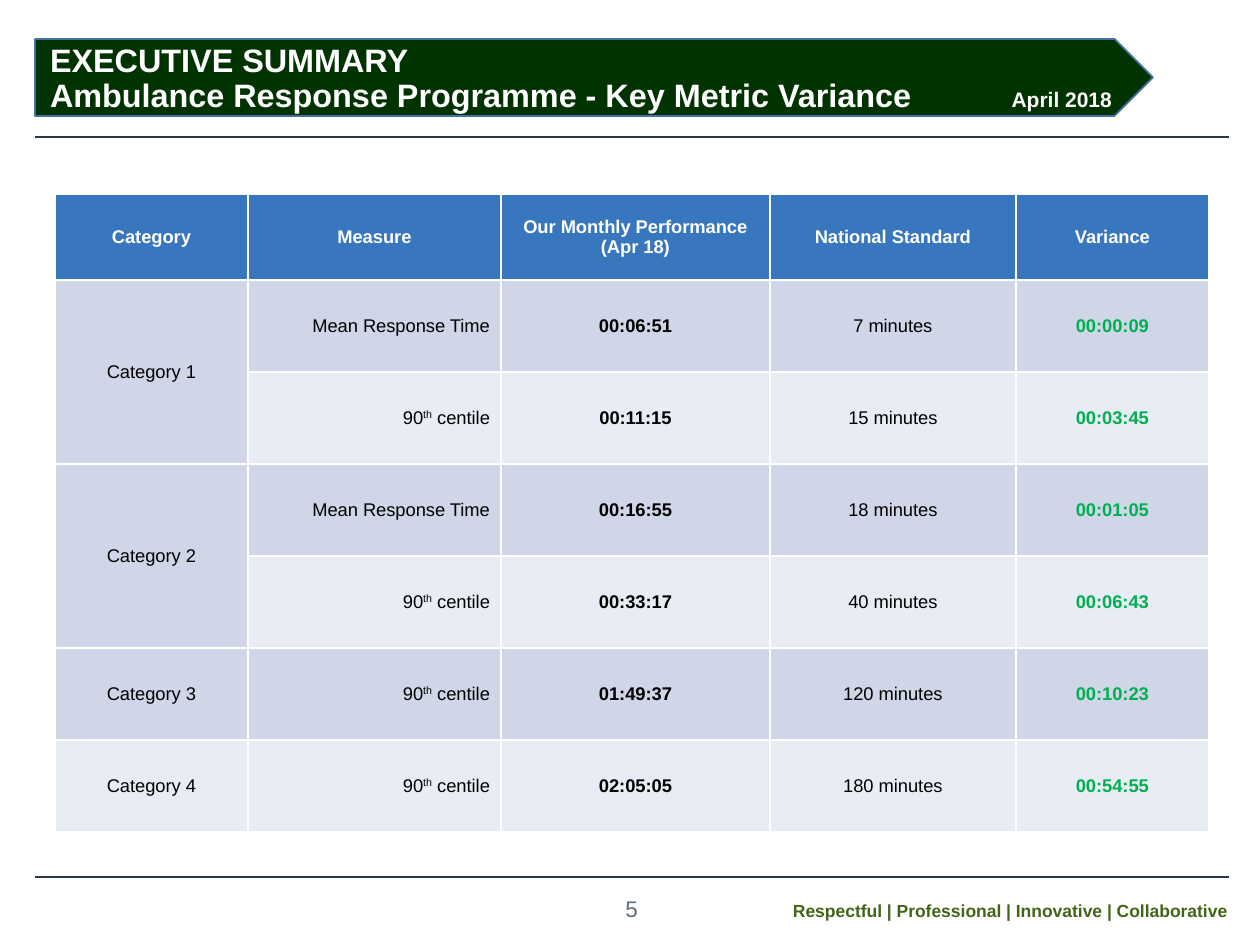
from lxml.etree import SubElement
from pptx import Presentation
from pptx.dml.color import RGBColor
from pptx.enum.shapes import MSO_CONNECTOR, MSO_SHAPE
from pptx.enum.text import MSO_ANCHOR, MSO_AUTO_SIZE, PP_ALIGN
from pptx.oxml.ns import qn
from pptx.util import Pt

EMU_PER_PX = 914400 / 126
HEADERS = ["Category", "Measure", "Our Monthly Performance\n(Apr 18)", "National Standard", "Variance"]
MEAN, CENTILE = "Mean Response Time", "90^th^ centile"
METRICS = [
    ("Category 1", MEAN, "00:06:51", "7 minutes", "00:00:09"),
    ("", CENTILE, "00:11:15", "15 minutes", "00:03:45"),
    ("Category 2", MEAN, "00:16:55", "18 minutes", "00:01:05"),
    ("", CENTILE, "00:33:17", "40 minutes", "00:06:43"),
    ("Category 3", CENTILE, "01:49:37", "120 minutes", "00:10:23"),
    ("Category 4", CENTILE, "02:05:05", "180 minutes", "00:54:55"),
]
COLUMN_WIDTHS = [193, 253, 269, 246, 193]
HEADER_HEIGHT, METRIC_HEIGHT = 86, 92
HEADER_FILL, DARK_BAND, LIGHT_BAND = "3876BE", "CED6E8", "E8ECF4"
WHITE, BLACK, GREEN = "FFFFFF", "000000", "00B050"


def px(length):
    """Turn pixels into EMU."""
    return round(length * EMU_PER_PX)


def paint(color_format, color):
    """Set a colour from a hex string."""
    color_format.rgb = RGBColor.from_string(color)


def write(frame, text, size=10.5, color=BLACK, bold=False, align=PP_ALIGN.CENTER):
    """Append text to the first paragraph; newlines break it and ^marks^ raise it."""
    paragraph = frame.paragraphs[0]
    paragraph.alignment = align
    for line_index, line in enumerate(text.split("\n")):
        if line_index:
            paragraph.add_line_break()
        for part_index, part in enumerate(line.split("^")):
            run = paragraph.add_run()
            run.text = part
            run.font.name, run.font.size, run.font.bold = "Arial", Pt(size), bold
            paint(run.font.color, color)
            if part_index % 2:
                run.font._element.set("baseline", "30000")


def set_margins(target, left=0, top=0, right=0, bottom=0):
    """Set the inner margins of a text frame or cell."""
    target.margin_left, target.margin_top = px(left), px(top)
    target.margin_right, target.margin_bottom = px(right), px(bottom)


def add_rule(slide, y):
    """Draw a thin line across the slide."""
    rule = slide.shapes.add_connector(MSO_CONNECTOR.STRAIGHT, px(35), px(y), px(1229), px(y))
    rule.line.width = Pt(1)
    paint(rule.line.color, "293947")
    SubElement(rule._element.spPr, qn("a:effectLst"))


def add_label(slide, text, left, top, width, height, anchor=MSO_ANCHOR.TOP, **text_format):
    """Add a text box without margins."""
    frame = slide.shapes.add_textbox(px(left), px(top), px(width), px(height)).text_frame
    frame.word_wrap = True
    frame.vertical_anchor = anchor
    set_margins(frame)
    write(frame, text, **text_format)


def add_banner(slide):
    """Draw the arrow-shaped band behind the title."""
    banner = slide.shapes.add_shape(MSO_SHAPE.PENTAGON, px(35), px(39), px(1118), px(77))
    banner.shadow.inherit = False
    banner.fill.solid()
    paint(banner.fill.fore_color, "003300")
    paint(banner.line.color, "43739E")
    banner.line.width = Pt(1)


def fill_title(slide):
    """Place the title with its date at a right tab stop."""
    title = slide.shapes.title
    title.left, title.top, title.width, title.height = px(37), px(39), px(1118), px(98)
    slide.shapes._spTree.append(title._element)
    frame = title.text_frame
    frame.word_wrap = True
    frame.auto_size = MSO_AUTO_SIZE.NONE
    frame.vertical_anchor = MSO_ANCHOR.TOP
    set_margins(frame, 13, 6, 13, 6)
    paragraph = frame.paragraphs[0]
    tab_stops = SubElement(paragraph._p.get_or_add_pPr(), qn("a:tabLst"))
    SubElement(tab_stops, qn("a:tab"), pos=str(px(1062)), algn="r")
    paragraph.line_spacing = 0.9
    heading = "EXECUTIVE SUMMARY\nAmbulance Response Programme - Key Metric Variance"
    write(frame, heading, size=18.5, color=WHITE, bold=True, align=PP_ALIGN.LEFT)
    write(frame, "\tApril 2018", size=12, color=WHITE, bold=True, align=PP_ALIGN.LEFT)


def style_cell(cell, fill):
    """Give a cell white borders, a fill and a middle anchor."""
    properties = cell._tc.get_or_add_tcPr()
    for side in ("lnL", "lnR", "lnT", "lnB"):
        border = SubElement(properties, qn(f"a:{side}"), w=str(Pt(1)))
        SubElement(SubElement(border, qn("a:solidFill")), qn("a:srgbClr"), val=WHITE)
    cell.fill.solid()
    paint(cell.fill.fore_color, fill)
    cell.vertical_anchor = MSO_ANCHOR.MIDDLE
    set_margins(cell)


def add_metrics_table(slide):
    """Build the table of response times against national standards."""
    height = HEADER_HEIGHT + METRIC_HEIGHT * len(METRICS)
    table = slide.shapes.add_table(
        len(METRICS) + 1, len(HEADERS), px(55), px(194), px(sum(COLUMN_WIDTHS)), px(height)
    ).table
    for column, width in zip(table.columns, COLUMN_WIDTHS):
        column.width = px(width)
    for row_index, row in enumerate(table.rows):
        row.height = px(METRIC_HEIGHT if row_index else HEADER_HEIGHT)
    for column_index, header in enumerate(HEADERS):
        cell = table.cell(0, column_index)
        style_cell(cell, HEADER_FILL)
        write(cell.text_frame, header, color=WHITE, bold=True)

    value_formats = [{}, {"align": PP_ALIGN.RIGHT}, {"bold": True}, {}, {"bold": True, "color": GREEN}]
    for row_index, metric in enumerate(METRICS, start=1):
        band = DARK_BAND if row_index % 2 else LIGHT_BAND
        for column_index, (value, value_format) in enumerate(zip(metric, value_formats)):
            cell = table.cell(row_index, column_index)
            style_cell(cell, band)
            if column_index == 1:
                cell.margin_right = px(11)
            if value:
                write(cell.text_frame, value, **value_format)
            else:
                table.cell(row_index - 1, column_index).merge(cell)


def main():
    """Build and save the slide."""
    presentation = Presentation()
    presentation.slide_width, presentation.slide_height = px(1260), px(945)
    slide = presentation.slides.add_slide(presentation.slide_layouts[5])
    add_label(slide, "5", 617, 892, 29, 32, anchor=MSO_ANCHOR.MIDDLE, size=12.9, color="5E707D")
    for y in (137, 877):
        add_rule(slide, y)
    add_label(slide, "Respectful | Professional | Innovative | Collaborative", 777, 900, 450, 29,
              size=10, color="436518", bold=True, align=PP_ALIGN.RIGHT)
    add_banner(slide)
    fill_title(slide)
    add_metrics_table(slide)
    presentation.save("out.pptx")


if __name__ == "__main__":
    main()
